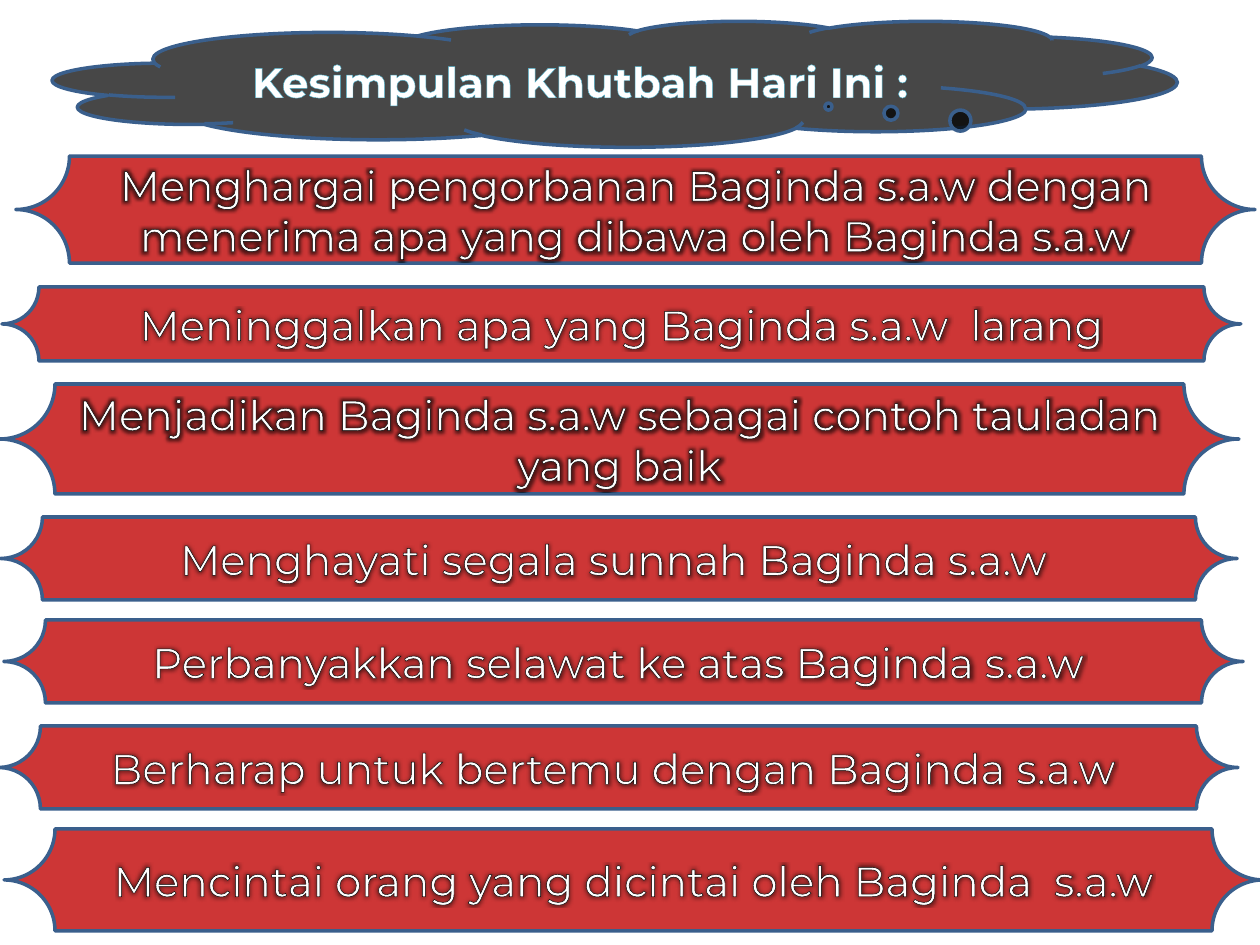
from dataclasses import dataclass
from lxml import etree
from pptx import Presentation
from pptx.dml.color import RGBColor as RGB
from pptx.enum.shapes import MSO_SHAPE as Shape
from pptx.enum.text import MSO_ANCHOR as Anchor, PP_ALIGN as Align
from pptx.oxml import parse_xml
from pptx.oxml.ns import qn
from pptx.util import Emu, Pt


@dataclass
class Theme:
    font: str = "Montserrat"
    size: int = 24
    white: str = "FFFFFF"
    black: str = "000000"
    red: str = "C00000"
    edge: str = "3A5F8C"
    cyan: str = "4BACC6"
    line: int = 2


theme = Theme()
NS = 'xmlns:a="http://schemas.openxmlformats.org/drawingml/2006/main"'
PX = 914400 // 126


def draw(kind, box, fill, alpha):
    shape = slide.shapes.add_shape(kind, *[Emu(n * PX) for n in box])
    shape.shadow.inherit = False
    shape.fill.solid()
    shape.fill.fore_color.rgb = RGB.from_string(fill)
    color = shape.fill._xPr.find(qn("a:solidFill"))[0]
    etree.SubElement(color, qn("a:alpha"), val=str(alpha * 1000))
    shape.line.color.rgb = RGB.from_string(theme.edge)
    shape.line.width = Pt(theme.line)
    return shape


def write(shape, text, bold, edge, width):
    frame = shape.text_frame
    frame.word_wrap = True
    frame.vertical_anchor = Anchor.MIDDLE
    para = frame.paragraphs[0]
    para.alignment = Align.CENTER
    run = para.add_run()
    run.text = text
    font = para.font
    font.name = theme.font
    font.size = Pt(theme.size)
    font.bold = bold
    font.color.rgb = RGB.from_string(theme.white)
    props = run._r.get_or_add_rPr()
    props.append(parse_xml(
        f'<a:ln {NS} w="{Pt(width)}"><a:solidFill>'
        f'<a:srgbClr val="{edge}"/></a:solidFill></a:ln>'))
    return props


deck = Presentation()
deck.slide_width = Emu(1260 * PX)
deck.slide_height = Emu(945 * PX)
slide = deck.slides.add_slide(deck.slide_layouts[5])

cloud = draw(Shape.CLOUD_CALLOUT, (53, 21, 1124, 126), theme.black, 72)
cloud.adjustments[0] = 0.19
cloud.adjustments[1] = 0.18

title = slide.shapes.title
title.left, title.top, title.width, title.height = [
    Emu(n * PX) for n in (213, 40, 734, 82)]
write(title, "Kesimpulan Khutbah Hari Ini :", True, theme.cyan, 0.8)
slide.shapes._spTree.append(title._element)

points = [
    (16, 156, 1239, 107, "Menghargai pengorbanan Baginda s.a.w dengan "
     "menerima apa yang dibawa oleh Baginda s.a.w"),
    (2, 287, 1239, 74, "Meninggalkan apa yang Baginda s.a.w  larang"),
    (0, 384, 1239, 110, "Menjadikan Baginda s.a.w sebagai contoh tauladan yang baik"),
    (1, 517, 1236, 83, "Menghayati segala sunnah Baginda s.a.w "),
    (4, 620, 1239, 83, "Perbanyakkan selawat ke atas Baginda s.a.w "),
    (-1, 726, 1239, 83, "Berharap untuk bertemu dengan Baginda s.a.w "),
    (4, 829, 1259, 102, "Mencintai orang yang dicintai oleh Baginda  s.a.w"),
]
for *box, text in points:
    plaque = draw(Shape.PLAQUE, box, theme.red, 79)
    plaque.adjustments[0] = 0.5
    props = write(plaque, text, False, theme.black, 0.75)
    props.append(parse_xml(
        f'<a:effectLst {NS}><a:glow rad="{Pt(5)}"><a:srgbClr val="{theme.black}">'
        '<a:alpha val="60000"/></a:srgbClr></a:glow></a:effectLst>'))

deck.save("out.pptx")
